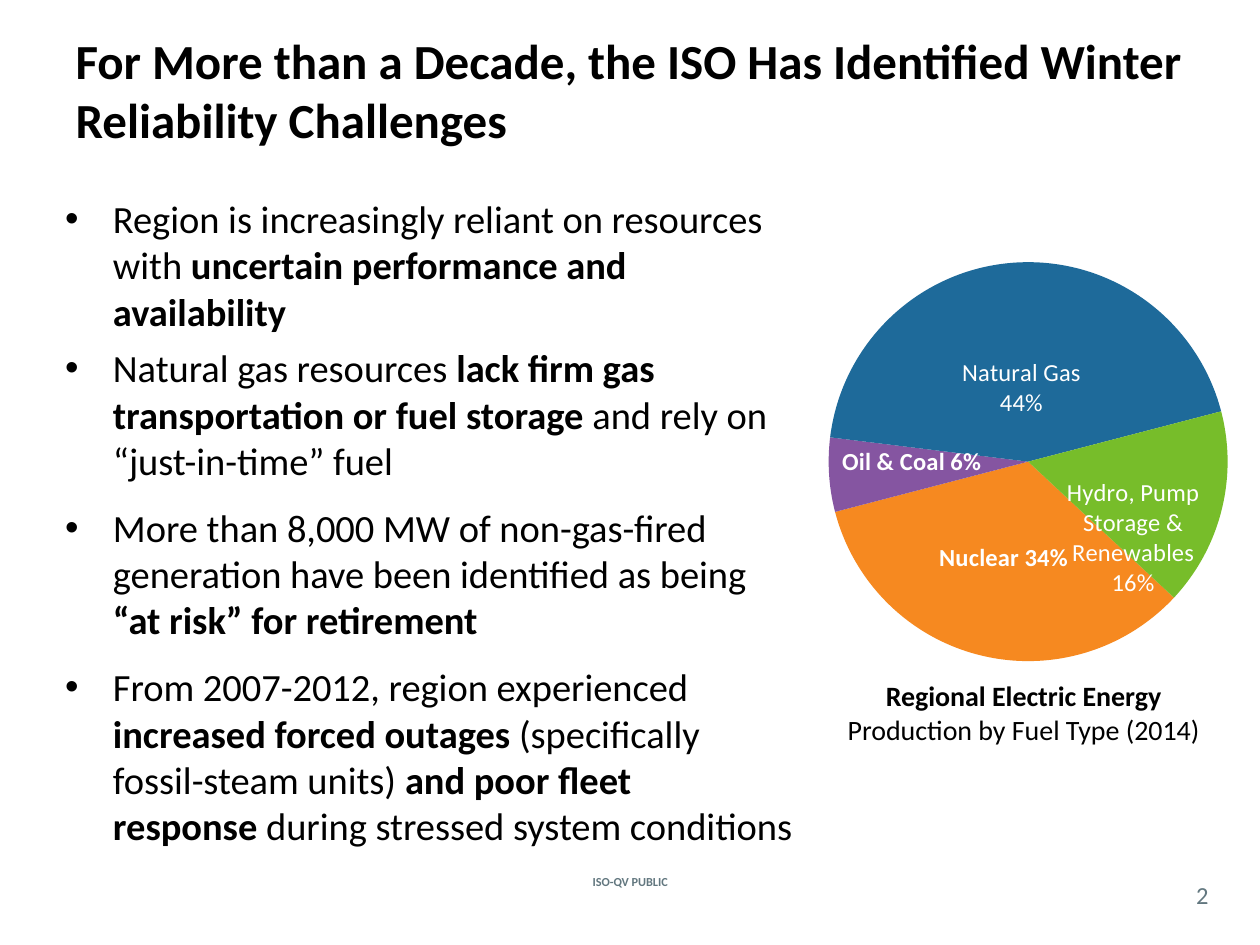
from lxml import etree
from pptx import Presentation
from pptx import util as u
from pptx.chart.data import CategoryChartData
from pptx.dml.color import RGBColor
from pptx.enum import chart as ch, text as t
from pptx.oxml import parse_xml
from pptx.oxml.ns import nsdecls, qn

FONT = "Calibri"
BLACK = RGBColor(0, 0, 0)
WHITE = RGBColor(255, 255, 255)
SLATE = RGBColor(0x62, 0x77, 0x7F)
ORANGE = RGBColor(0xF6, 0x89, 0x20)
PURPLE = RGBColor(0x85, 0x55, 0xA1)
BLUE = RGBColor(0x1E, 0x6A, 0x9A)
GREEN = RGBColor(0x77, 0xBD, 0x2A)

prs = Presentation()
prs.slide_width, prs.slide_height = u.Inches(10), u.Inches(7.5)
col, row = prs.slide_width / 24, prs.slide_height / 18
slide = prs.slides.add_slide(prs.slide_layouts[1])
shapes = slide.shapes


def grid(x, y, w, h):
    """Turn grid columns and rows into slide lengths."""
    return int(x * col), int(y * row), int(w * col), int(h * row)


def style(font, size, color, bold=None):
    font.name, font.size, font.bold = FONT, u.Pt(size), bold
    font.color.rgb = color


# Title
title = shapes.title
title.left, title.top, title.width, title.height = grid(1.2, 0.2, 21.6, 3)
title.text_frame.text = ("For More than a Decade, the ISO Has Identified "
                         "Winter Reliability Challenges")
title.text_frame.vertical_anchor = t.MSO_ANCHOR.MIDDLE
title.text_frame.auto_size = t.MSO_AUTO_SIZE.NONE
head = title.text_frame.paragraphs[0]
head.alignment = t.PP_ALIGN.LEFT
style(head.font, 28, BLACK, True)

# Bullets: text between asterisks is bold
points = [
    (0, "Region is increasingly reliant on resources with "
        "*uncertain performance and availability*"),
    (6, "Natural gas resources *lack firm gas transportation or fuel storage *"
        "and rely on “just-in-time” fuel"),
    (12, "More than 8,000 MW of non-gas-fired \ngeneration have been "
         "identified as being *“at risk” for retirement*"),
    (12, "From 2007-2012, region experienced *increased forced outages *"
         "(specifically fossil-steam units)* and poor fleet \nresponse *"
         "during stressed system conditions"),
]
body = slide.placeholders[1]
body.left, body.top, body.width, body.height = grid(1, 3.6, 14.4, 12.9)
frame = body.text_frame
frame.auto_size = t.MSO_AUTO_SIZE.NONE
for i, (gap, words) in enumerate(points):
    para = frame.paragraphs[0] if i == 0 else frame.add_paragraph()
    props = para._p.get_or_add_pPr()
    props.set("marL", str(u.Inches(0.38)))
    props.set("indent", str(u.Inches(-0.38)))
    etree.SubElement(props, qn("a:buFont")).set("typeface", "Arial")
    etree.SubElement(props, qn("a:buChar")).set("char", "•")
    para.space_before = u.Pt(gap)
    style(para.font, 22, BLACK)
    for j, part in enumerate(words.split("*")):
        for k, line in enumerate(part.split("\n")):
            if k:
                para.add_line_break()
            if line:
                run = para.add_run()
                run.text = line
                run.font.bold = j % 2 == 1

# Pie: name, share, color, label text, label shift
fuels = [
    ("Nuclear", 0.34, ORANGE, None, None),
    ("Oil & Coal", 0.06, PURPLE, None, (-0.02, -0.01)),
    ("Natural Gas", 0.44, BLUE, "Natural Gas 44%", (0, 0.04)),
    ("Hydro, Pump Storage & Other Renewables", 0.16, GREEN,
     "Hydro, Pump\nStorage &\nRenewables\n16%", (0.01, 0.08)),
]
data = CategoryChartData(number_format="0%")
data.categories = [fuel[0] for fuel in fuels]
data.add_series("Series 1", [fuel[1] for fuel in fuels])
pie = shapes.add_chart(ch.XL_CHART_TYPE.PIE, *grid(12.2, 2.8, 16, 12.4),
                       data).chart
pie.has_title = pie.has_legend = False
style(pie.font, 18, SLATE)
plot = pie.plots[0]
plot.vary_by_categories = True
turn = plot._element.find(qn("c:firstSliceAng"))
if turn is None:
    turn = etree.SubElement(plot._element, qn("c:firstSliceAng"))
turn.set("val", "133")

area = pie._chartSpace.chart.plotArea
for old in area.findall(qn("c:layout")):
    area.remove(old)
area.insert(0, parse_xml(
    f'<c:layout {nsdecls("c")}><c:manualLayout><c:layoutTarget val="inner"/>'
    '<c:xMode val="edge"/><c:yMode val="edge"/><c:x val="0.224"/>'
    '<c:y val="0.177"/><c:w val="0.475"/><c:h val="0.613"/>'
    '</c:manualLayout></c:layout>'))

series = plot.series[0]
labels = series.data_labels
labels.show_value = labels.show_category_name = True
labels.show_percentage = False
labels.number_format, labels.number_format_is_linked = "0%", False
labels.position = ch.XL_LABEL_POSITION.CENTER
style(labels.font, 14, WHITE, True)
lead = labels._element.find(qn("c:showBubbleSize"))
gap = etree.Element(qn("c:separator"))
gap.text = " "
lead.addnext(gap)

for i, (name, share, color, words, shift) in enumerate(fuels):
    point = series.points[i]
    point.format.fill.solid()
    point.format.fill.fore_color.rgb = color
    label = point.data_label
    if words:
        label.text_frame.text = words
        for para in label.text_frame.paragraphs:
            style(para.font, 14, WHITE, False)
            for run in para.runs:
                style(run.font, 14, WHITE, False)
    elif shift:
        style(label.font, 14, WHITE, True)
    if shift:
        label.position = ch.XL_LABEL_POSITION.CENTER
        node = label._dLbl
        for tag in ("c:showVal", "c:showCatName"):
            node.find(qn(tag)).set("val", "1")
        if not words:
            mark = etree.Element(qn("c:separator"))
            mark.text = " "
            node.find(qn("c:showBubbleSize")).addnext(mark)
        node.find(qn("c:idx")).addnext(parse_xml(
            f'<c:layout {nsdecls("c")}><c:manualLayout>'
            f'<c:x val="{shift[0]}"/><c:y val="{shift[1]}"/>'
            '</c:manualLayout></c:layout>'))

# Caption, footer and page number
notes = [
    ((15.4, 12.8, 8.2, 1.54), 16, BLACK,
     [("Regional Electric Energy ", True),
      ("Production by Fuel Type (2014)", False)]),
    ((10.24, 16.6, 3.53, 0.4), 7, SLATE, [("ISO-QV PUBLIC", True)]),
    ((22.4, 16.7, 1, 0.7), 14, SLATE, [("2", False)]),
]
for place, size, color, parts in notes:
    frame = shapes.add_textbox(*grid(*place)).text_frame
    frame.word_wrap = True
    frame.vertical_anchor = t.MSO_ANCHOR.MIDDLE
    if size == 14:
        frame.margin_left = frame.margin_right = 0
        frame.margin_top = frame.margin_bottom = 0
    para = frame.paragraphs[0]
    para.alignment = t.PP_ALIGN.CENTER
    style(para.font, size, color)
    for words, bold in parts:
        run = para.add_run()
        run.text, run.font.bold = words, bold

prs.save("out.pptx")
